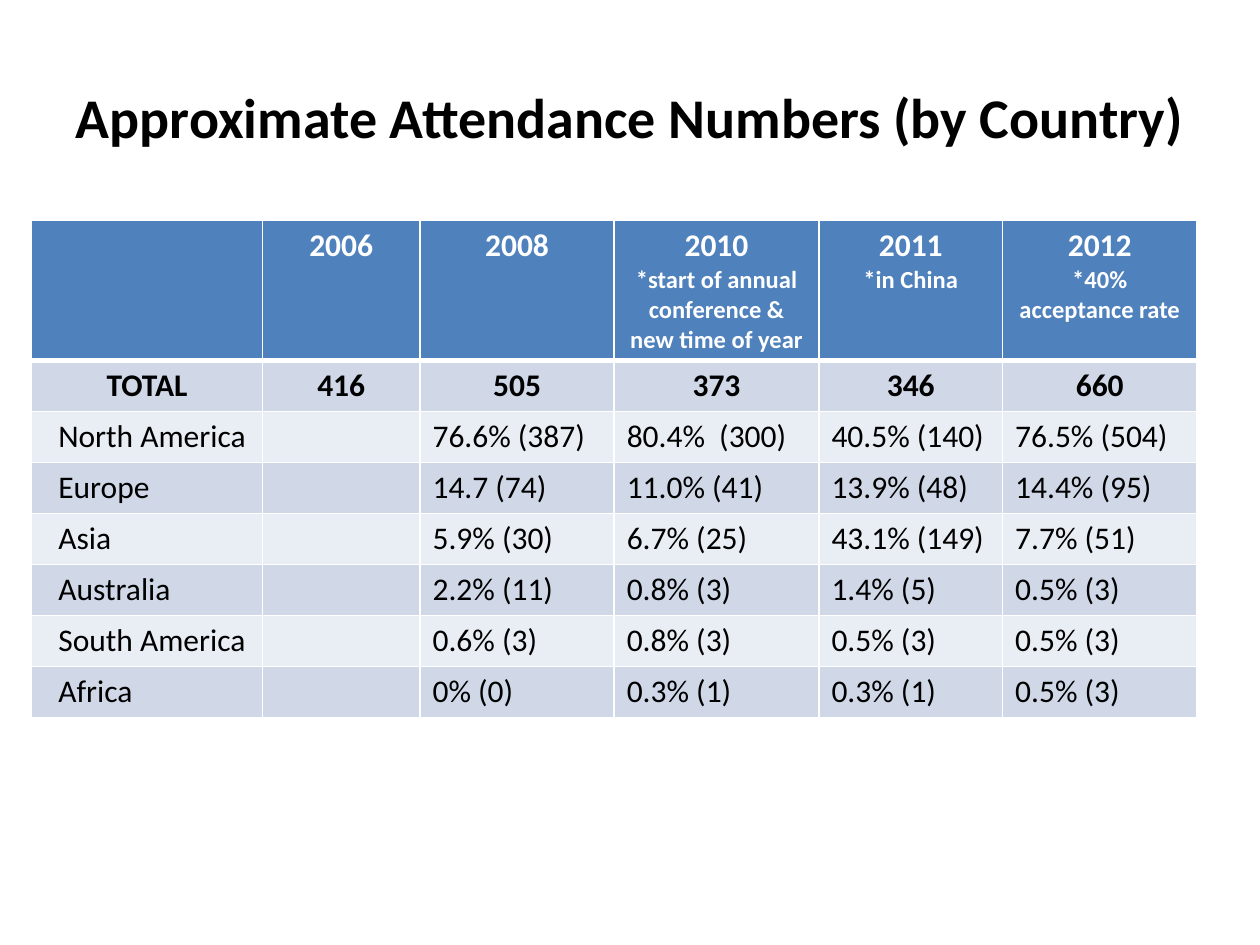
from lxml.etree import SubElement
from pptx import Presentation
from pptx.dml.color import RGBColor
from pptx.enum.text import MSO_ANCHOR, PP_ALIGN
from pptx.oxml.ns import qn
from pptx.util import Pt

FONT = "Calibri"
BLACK, WHITE = "000000", "FFFFFF"
HEADER_FILL, DARK_BAND, LIGHT_BAND = "4F81BD", "D0D8E8", "E9EDF4"
COLUMN_WIDTHS = [132, 90, 111, 117, 105, 111]
HEADER_HEIGHT, ROW_HEIGHT = 80, 29.15
CELL_MARGIN, REGION_MARGIN = 7.2, 15.35

ROWS = [
    ["", "2006", "2008",
     "2010\n*start of annual conference & new time of year",
     "2011\n*in China", "2012\n*40% acceptance rate"],
    ["TOTAL", "416", "505", "373", "346", "660"],
    ["North America", "", "76.6% (387)", "80.4%  (300)", "40.5% (140)", "76.5% (504)"],
    ["Europe", "", "14.7 (74)", "11.0% (41)", "13.9% (48)", "14.4% (95)"],
    ["Asia", "", "5.9% (30)", "6.7% (25)", "43.1% (149)", "7.7% (51)"],
    ["Australia", "", "2.2% (11)", "0.8% (3)", "1.4% (5)", "0.5% (3)"],
    ["South America", "", "0.6% (3)", "0.8% (3)", "0.5% (3)", "0.5% (3)"],
    ["Africa", "", "0% (0)", "0.3% (1)", "0.3% (1)", "0.5% (3)"],
]


def rgb(color):
    """Turn a hex string into a colour."""
    return RGBColor.from_string(color)


def style_paragraph(paragraph, size, color, bold, alignment):
    """Set the alignment and font of a paragraph."""
    paragraph.alignment = alignment
    font = paragraph.font
    font.name, font.size, font.bold = FONT, Pt(size), bold
    font.color.rgb = rgb(color)


def set_borders(cell, top=1, bottom=1):
    """Draw white borders around a cell."""
    properties = cell._tc.get_or_add_tcPr()
    for side, width in {"L": 1, "R": 1, "T": top, "B": bottom}.items():
        line = SubElement(properties, qn(f"a:ln{side}"), w=str(Pt(width)))
        fill = SubElement(line, qn("a:solidFill"))
        SubElement(fill, qn("a:srgbClr"), val=WHITE)


def add_title(slide, text):
    """Add the centred slide title."""
    shape = slide.shapes.add_textbox(Pt(36), Pt(21.6), Pt(648), Pt(90))
    frame = shape.text_frame
    frame.word_wrap = True
    frame.vertical_anchor = MSO_ANCHOR.MIDDLE
    frame.text = text
    style_paragraph(frame.paragraphs[0], 32, BLACK, True, PP_ALIGN.CENTER)


def fill_cell(cell, text, row, column):
    """Write one cell and style it by its row and column."""
    is_header, is_total = row == 0, row == 1
    set_borders(cell, top=3 if is_total else 1, bottom=3 if is_header else 1)
    cell.fill.solid()
    band = DARK_BAND if row % 2 else LIGHT_BAND
    cell.fill.fore_color.rgb = rgb(HEADER_FILL if is_header else band)
    is_region = column == 0 and row > 1
    cell.margin_left = Pt(REGION_MARGIN if is_region else CELL_MARGIN)
    cell.text = text
    alignment = PP_ALIGN.CENTER if row < 2 else PP_ALIGN.LEFT
    for index, paragraph in enumerate(cell.text_frame.paragraphs):
        style_paragraph(paragraph, 14 if index else 18,
                        WHITE if is_header else BLACK, row < 2, alignment)


def add_attendance_table(slide):
    """Add the table of attendance by region and year."""
    heights = [HEADER_HEIGHT] + [ROW_HEIGHT] * (len(ROWS) - 1)
    table = slide.shapes.add_table(
        len(ROWS), len(COLUMN_WIDTHS), Pt(18), Pt(126),
        Pt(sum(COLUMN_WIDTHS)), Pt(sum(heights))).table
    for column, width in zip(table.columns, COLUMN_WIDTHS):
        column.width = Pt(width)
    for row, height in zip(table.rows, heights):
        row.height = Pt(height)
    for row, texts in enumerate(ROWS):
        for column, text in enumerate(texts):
            fill_cell(table.cell(row, column), text, row, column)


def main():
    """Build and save the attendance slide."""
    presentation = Presentation()
    presentation.slide_width, presentation.slide_height = Pt(720), Pt(540)
    slide = presentation.slides.add_slide(presentation.slide_layouts[6])
    add_title(slide, "Approximate Attendance Numbers (by Country)")
    add_attendance_table(slide)
    presentation.save("out.pptx")


if __name__ == "__main__":
    main()
